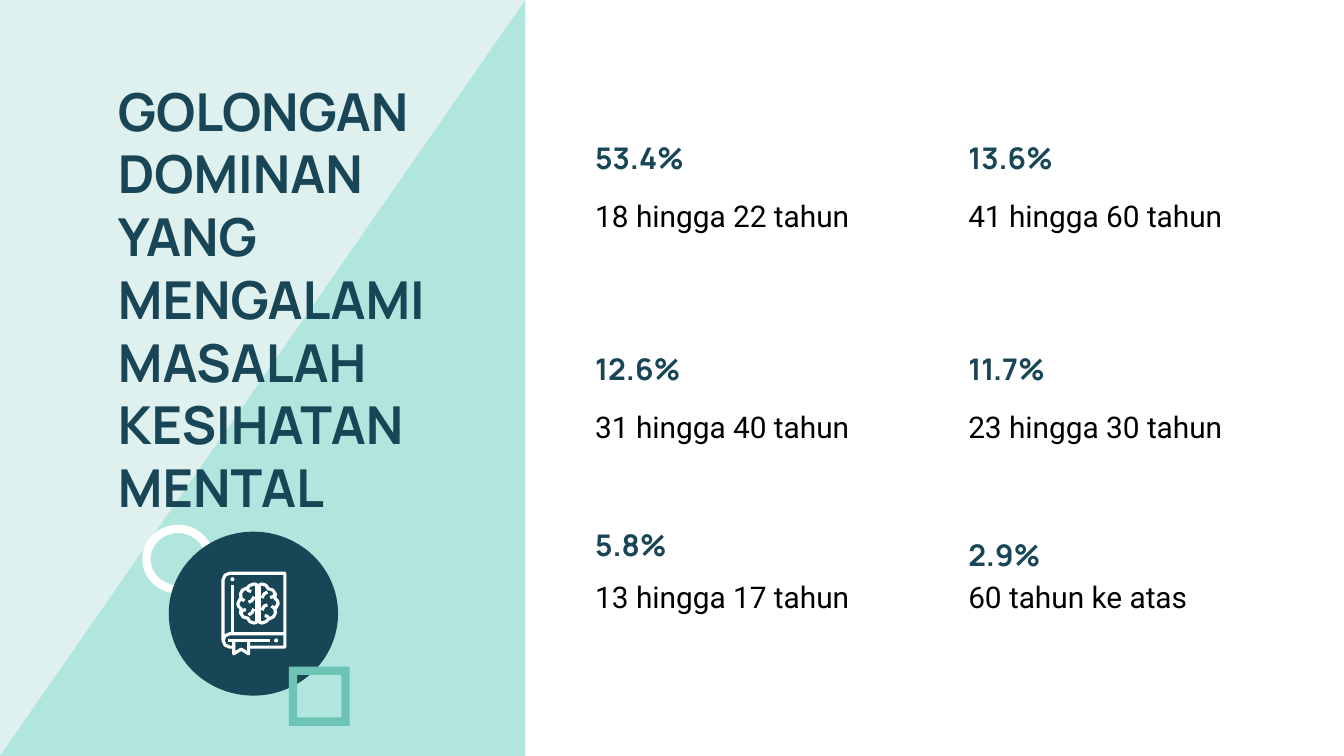
from dataclasses import dataclass

from pptx import Presentation
from pptx.dml.color import RGBColor as RGB
from pptx.enum.shapes import MSO_SHAPE as Kind
from pptx.enum.text import MSO_ANCHOR as Anchor, PP_ALIGN as Align
from pptx.util import Cm, Pt


@dataclass(frozen=True)
class Theme:
    pale: RGB = RGB.from_string("DFF1EF")
    mint: RGB = RGB.from_string("B1E6DE")
    teal: RGB = RGB.from_string("6CC3B6")
    navy: RGB = RGB.from_string("194656")
    white: RGB = RGB.from_string("FFFFFF")
    black: RGB = RGB.from_string("000000")
    head: str = "Manrope"
    body: str = "Roboto"
    big: Pt = Pt(28)
    small: Pt = Pt(16)
    pen: Pt = Pt(1.7)


T = Theme()

TITLE = "GOLONGAN DOMINAN YANG MENGALAMI MASALAH KESIHATAN MENTAL"

# Each row: top of the labels, then (share, age group, gap from share to label)
ROWS = [
    (3.48, [("53.4%", "18 hingga 22 tahun", 1.02),
            ("13.6%", "41 hingga 60 tahun", 1.02)]),
    (7.47, [("12.6%", "31 hingga 40 tahun", 1.02),
            ("11.7%", "23 hingga 30 tahun", 1.02)]),
    (10.69, [("5.8%", "13 hingga 17 tahun", 0.91),
             ("2.9%", "60 tahun ke atas", 0.71)]),
]

# Book strokes on a grid 48 wide and 62 high
BOOK = [
    [(20, 56), (47, 56), (47, 1), (6, 1), (2.5, 2.5), (1, 6), (1, 51),
     (2.5, 54.5), (6, 56), (9, 56)],
    [(47, 46), (6, 46), (2.5, 47.5), (1, 51)],
    [(5, 51), (36, 51)],
    [(8, 10), (8, 46)],
    [(9, 51), (9, 61), (14.5, 57.5), (20, 61), (20, 51)],
]
DOTS = [(8, 5.5), (40.5, 51)]

# Right half of the brain, around its centre; the left half is a half turn of it
HALF = [
    [(1, 14), (1, -14), (3, -14.5), (6, -13.5), (7.5, -11), (11, -10),
     (13, -7), (12.5, -4), (14.5, -2), (15, 0), (13.5, 3), (12.5, 4),
     (13, 7), (11.5, 10), (8, 11.5), (6, 13.5), (3, 14.5), (1, 14)],
    [(3, -4), (4.5, -7), (7, -8.5)],
    [(3, 5), (4.5, 2), (7, 1)],
    [(9, -4.5), (11, -5), (12.5, -6.5)],
    [(10, 2), (11.5, 3), (13, 3)],
    [(5, 9), (7, 9.5), (8, 11)],
]
MID = (27, 23.5)


def shape(slide, kind, box, fill, adj=None):
    item = slide.shapes.add_shape(kind, *map(Cm, box))
    item.shadow.inherit = False
    item.fill.solid()
    item.fill.fore_color.rgb = fill
    item.line.fill.background()
    if adj is not None:
        item.adjustments[0] = adj
    return item


def text(slide, box, words, font, size, color, bold=False, anchor=Anchor.TOP):
    frame = slide.shapes.add_textbox(*map(Cm, box)).text_frame
    frame.word_wrap = True
    frame.vertical_anchor = anchor
    frame.margin_left = frame.margin_right = Cm(0.25)
    frame.margin_top = frame.margin_bottom = Cm(0.25)
    frame.text = words
    para = frame.paragraphs[0]
    para.alignment = Align.LEFT
    face = para.runs[0].font
    face.name, face.size, face.bold = font, size, bold
    face.color.rgb = color


def stroke(slide, dots):
    pts = [(Cm(x), Cm(y)) for x, y in dots]
    path = slide.shapes.build_freeform(*pts[0])
    path.add_line_segments(pts[1:], close=False)
    item = path.convert_to_shape()
    item.shadow.inherit = False
    item.fill.background()
    item.line.color.rgb = T.white
    item.line.width = T.pen


def icon(slide, box):
    left, top, wide, _ = box
    unit = wide / 48

    def place(dots):
        return [(left + x * unit, top + y * unit) for x, y in dots]

    # Book
    for part in BOOK:
        stroke(slide, place(part))
    for x, y in place(DOTS):
        side = 3 * unit
        shape(slide, Kind.OVAL, (x - side / 2, y - side / 2, side, side), T.white)

    # Brain
    for turn in (1, -1):
        for part in HALF:
            stroke(slide, place((MID[0] + turn * x, MID[1] + turn * y)
                                for x, y in part))


def badge(slide, box):
    left, top, wide, high = box
    shape(slide, Kind.DONUT, (left, top, 1.35, 1.3), T.white, 0.12)
    shape(slide, Kind.OVAL, (left + 0.5, top + 0.13, 3.2, 3.1), T.navy)
    icon(slide, (left + 1.5, top + 0.89, 1.22, 1.57))
    shape(slide, Kind.FRAME, (left + wide - 1.15, top + high - 1.12, 1.15, 1.12),
          T.teal, 0.14)


def panel(slide, box):
    left, top, _, _ = box

    # Two triangles that fill the panel
    for fill, turn in ((T.pale, 180), (T.mint, 0)):
        half = shape(slide, Kind.RIGHT_TRIANGLE, box, fill)
        half.rotation = turn
        half._element.spPr.get_or_add_xfrm().set("flipH", "1")

    # Title and badge
    text(slide, (left + 1.98, top + 1.24, 6.63, 1.6), TITLE,
         T.head, T.big, T.navy, True)
    badge(slide, (left + 2.69, top + 9.92, 3.92, 3.8))


def shares(slide, box):
    left, top, wide, _ = box
    step = wide / 2
    for y, row in ROWS:
        for col, (share, group, gap) in enumerate(row):
            x = left + col * step
            text(slide, (x, top + y - gap, 4.75, 1.02), share,
                 T.head, T.small, T.navy, True, Anchor.MIDDLE)
            text(slide, (x, top + y, 5.94, 1.27), group,
                 T.body, T.small, T.black)


def main():
    deck = Presentation()
    deck.slide_width, deck.slide_height = Cm(25.4), Cm(14.29)
    slide = deck.slides.add_slide(deck.slide_layouts[6])
    panel(slide, (0, 0, 9.93, 14.29))
    shares(slide, (11, 0, 14.1, 14.29))
    deck.save("out.pptx")


if __name__ == "__main__":
    main()
